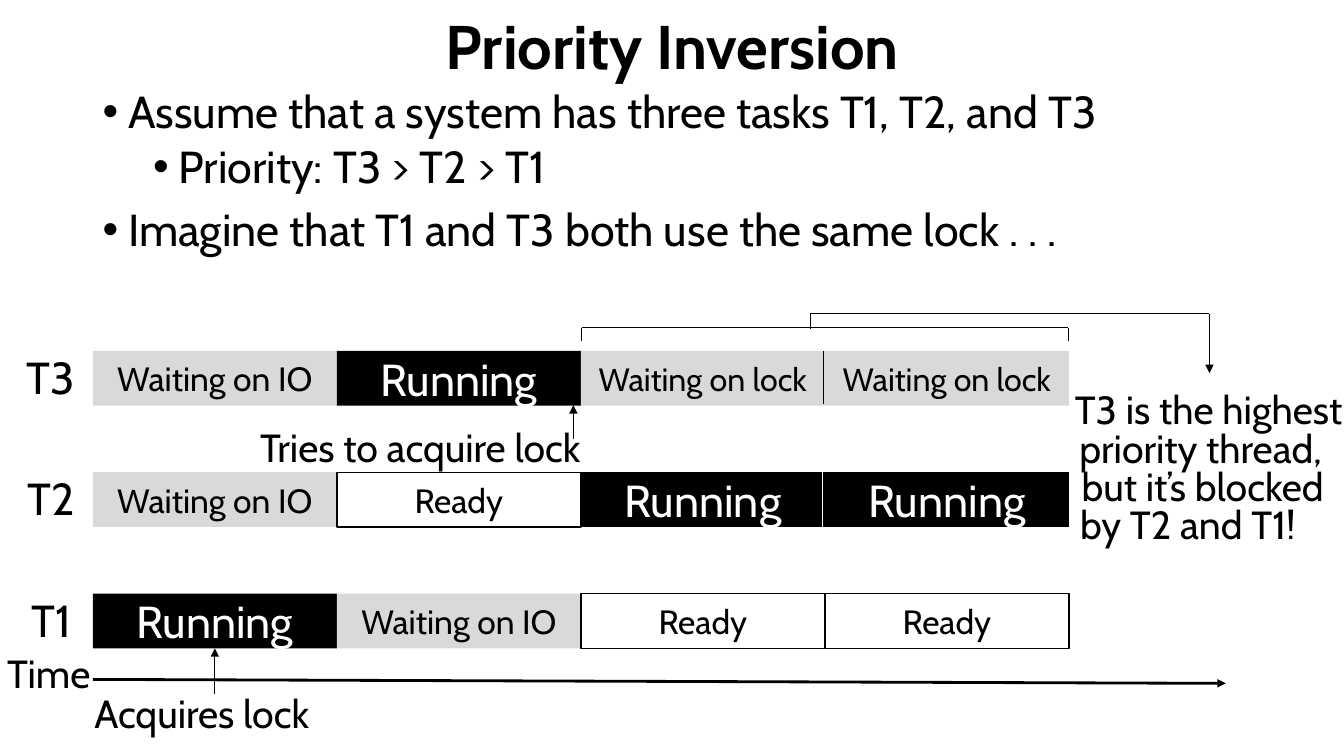
"""Builds a slide on priority inversion with a task timeline."""
from lxml import etree
from pptx import Presentation
from pptx.dml.color import RGBColor
from pptx.enum.shapes import MSO_CONNECTOR, MSO_SHAPE
from pptx.enum.text import MSO_ANCHOR, PP_ALIGN
from pptx.oxml.ns import qn
from pptx.util import Cm, Pt

RECT = MSO_SHAPE.RECTANGLE
LINE = MSO_CONNECTOR.STRAIGHT
MIDDLE = MSO_ANCHOR.MIDDLE
LEFT, CENTER = PP_ALIGN.LEFT, PP_ALIGN.CENTER

FONT = "Cabin"
BLACK, WHITE, GREY = "000000", "FFFFFF", "D9D9D9"

TITLE = "Priority Inversion"
BULLETS = [
    (0, "Assume that a system has three tasks T1, T2, and T3"),
    (1, "Priority: T3 > T2 > T1"),
    (0, "Imagine that T1 and T3 both use the same lock . . ."),
]
STATES = {
    "Running": (BLACK, None, WHITE, 32),
    "Ready": (WHITE, BLACK, BLACK, 24),
    "Waiting on IO": (GREY, None, BLACK, 24),
    "Waiting on lock": (GREY, None, BLACK, 23),
}
TASKS = [
    ("T3", ["Waiting on IO", "Running", "Waiting on lock", "Waiting on lock"]),
    ("T2", ["Waiting on IO", "Ready", "Running", "Running"]),
    ("T1", ["Running", "Waiting on IO", "Ready", "Ready"]),
]
NOTES = [
    ("Time", -0.08, 16.23, 2.62, CENTER),
    ("Acquires lock", 1.96, 17.25, 6.25, CENTER),
    ("Tries to acquire lock", 5.89, 10.54, 9.4, CENTER),
    ("T3 is the highest", 26.72, 9.58, 7.47, CENTER),
    ("priority thread,", 26.52, 10.57, 7.47, CENTER),
    ("but it’s blocked", 26.57, 11.53, 7.47, CENTER),
    ("by T2 and T1!", 26.97, 12.47, 6.1, LEFT),
]
LINES = [
    (2.34, 17.12, 30.89, 17.22, 2, BLACK, True),
    (14.45, 11.05, 14.45, 10.21, 0.75, BLACK, True),
    (14.66, 8.26, 26.92, 8.26, 0.5, BLACK, False),
    (26.92, 8.59, 26.92, 8.26, 0.5, BLACK, False),
    (14.66, 8.59, 14.66, 8.26, 0.5, BLACK, False),
    (20.42, 8.28, 20.42, 7.9, 0.5, BLACK, False),
    (20.42, 7.9, 30.48, 7.9, 0.5, BLACK, False),
    (30.48, 7.9, 30.48, 9.4, 0.5, BLACK, True),
    (20.73, 13.28, 20.73, 11.79, 1.25, WHITE, False),
    (20.75, 10.19, 20.75, 8.84, 1.25, BLACK, False),
]
GRID_X, GRID_Y = 2.34, 8.84
CELL_W, CELL_H, STEP = 6.15, 1.38, 3.06


def color(code):
    return RGBColor.from_string(code)


def style(para, size, ink=BLACK, align=CENTER, bold=False):
    para.alignment = align
    for run in para.runs:
        font = run.font
        font.name, font.size, font.bold = FONT, Pt(size), bold
        font.color.rgb = color(ink)


def add_text(slide, text, x, y, w, h, size, align=CENTER):
    box = slide.shapes.add_textbox(Cm(x), Cm(y), Cm(w), Cm(h))
    frame = box.text_frame
    frame.word_wrap = True
    frame.text = text
    style(frame.paragraphs[0], size, align=align)
    return frame


def add_cell(slide, state, x, y):
    fill, edge, ink, size = STATES[state]
    cell = slide.shapes.add_shape(RECT, Cm(x), Cm(y), Cm(CELL_W), Cm(CELL_H))
    cell.shadow.inherit = False
    cell.fill.solid()
    cell.fill.fore_color.rgb = color(fill)
    if edge:
        cell.line.color.rgb = color(edge)
        cell.line.width = Pt(1)
    else:
        cell.line.fill.background()
    frame = cell.text_frame
    frame.text = state
    frame.vertical_anchor = MIDDLE
    style(frame.paragraphs[0], size, ink)
    return cell


def add_line(slide, x1, y1, x2, y2, width, ink, arrow):
    line = slide.shapes.add_connector(LINE, Cm(x1), Cm(y1), Cm(x2), Cm(y2))
    line.line.width = Pt(width)
    line.line.color.rgb = color(ink)
    props = line.element.spPr
    if arrow:
        etree.SubElement(props.find(qn("a:ln")), qn("a:tailEnd"), type="triangle")
    etree.SubElement(props, qn("a:effectLst"))
    return line


def add_title(slide):
    title = slide.shapes.title
    title.left, title.top = Cm(2.34), Cm(0.13)
    title.width, title.height = Cm(29.21), Cm(2.24)
    frame = title.text_frame
    frame.text = TITLE
    frame.vertical_anchor = MIDDLE
    para = frame.paragraphs[0]
    para.line_spacing = 0.9
    style(para, 44, bold=True)


def add_bullets(slide):
    text = "\n".join(item for _, item in BULLETS)
    frame = add_text(slide, text, 2.34, 2.13, 29.21, 5.05, 32)
    for i, (para, (level, _)) in enumerate(zip(frame.paragraphs, BULLETS)):
        props = para._p.get_or_add_pPr()
        props.set("marL", str(Cm(0.64 + 1.27 * level)))
        props.set("indent", str(-Cm(0.64)))
        etree.SubElement(props, qn("a:buFont"), typeface="Arial")
        etree.SubElement(props, qn("a:buChar"), char="•")
        para.level = level
        para.line_spacing = 0.9
        if i:
            para.space_before = Pt(5 if level else 10)
        style(para, 32, align=LEFT)


def add_tasks(slide):
    cells = {}
    for row, (task, states) in enumerate(TASKS):
        y = GRID_Y + row * STEP
        add_text(slide, task, 0.25, y - 0.16, 2.08, 1.63, 32)
        for col, state in enumerate(states):
            cells[task, col] = add_cell(slide, state, GRID_X + col * CELL_W, y)
    return cells


def main():
    deck = Presentation()
    deck.slide_width, deck.slide_height = Cm(33.87), Cm(19.05)
    slide = deck.slides.add_slide(deck.slide_layouts[5])
    add_title(slide)
    add_bullets(slide)
    cells = add_tasks(slide)
    for text, x, y, w, align in NOTES:
        add_text(slide, text, x, y, w, 1.45, 28, align)
    for spec in LINES:
        add_line(slide, *spec)
    mid = GRID_X + CELL_W / 2
    lock = add_line(slide, mid, 17.5, mid, 16.38, 0.75, BLACK, True)
    lock.end_connect(cells["T1", 0], 2)
    deck.save("out.pptx")


if __name__ == "__main__":
    main()
